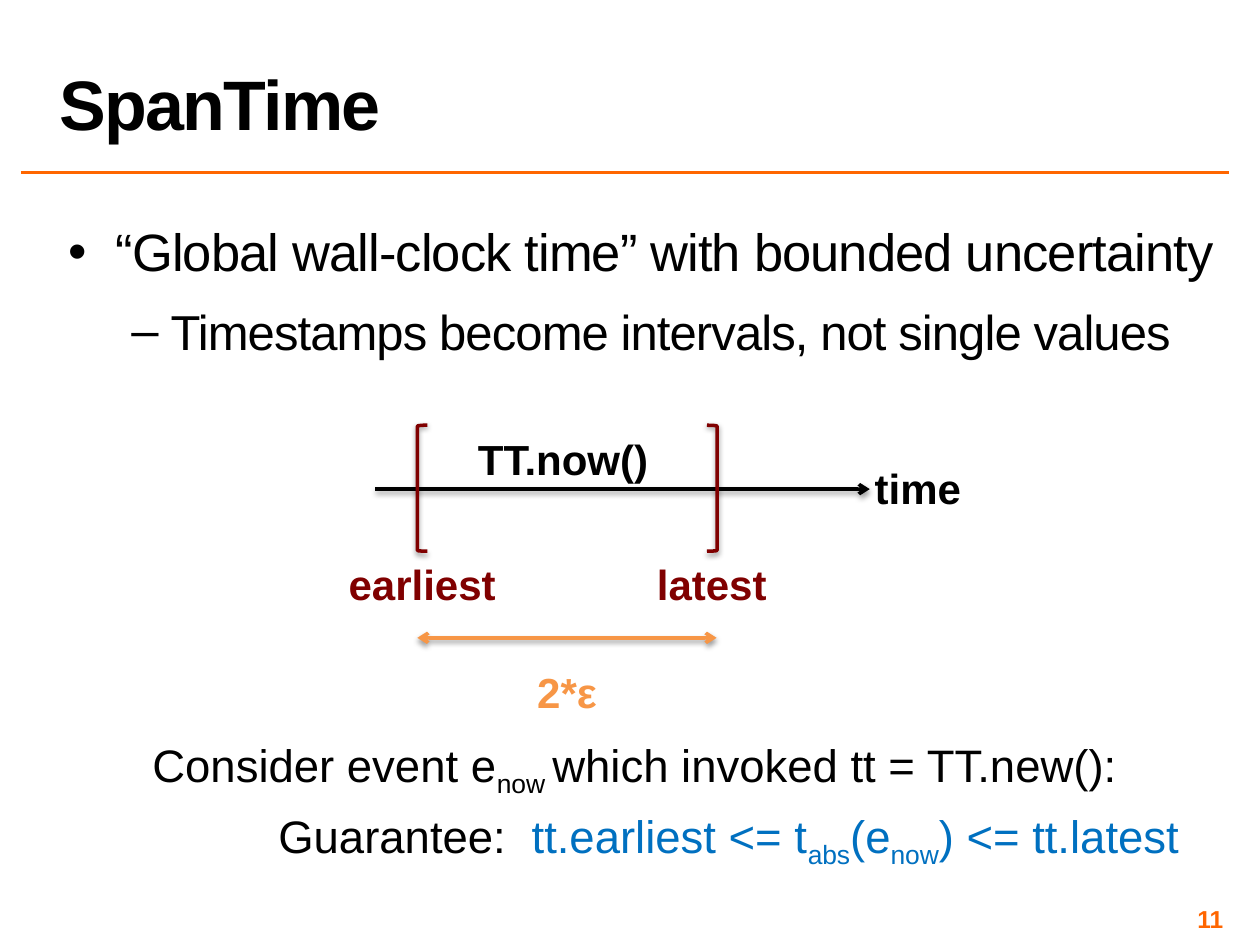
from lxml.etree import SubElement
from pptx import Presentation
from pptx.dml.color import RGBColor
from pptx.enum.shapes import MSO_CONNECTOR, MSO_SHAPE
from pptx.enum.text import MSO_ANCHOR, PP_ALIGN
from pptx.oxml.ns import qn
from pptx.util import Pt

HUES = {"black": "000000", "rule": "FF6600", "bound": "800000",
        "span": "F79646", "claim": "0070C0"}

deck = Presentation()
deck.slide_width, deck.slide_height = Pt(720), Pt(540)
slide = deck.slides.add_slide(deck.slide_layouts[6])


def write(text, box=None, frame=None, size=24, hue="black", bold=False,
          align=PP_ALIGN.LEFT, anchor=MSO_ANCHOR.TOP, wrap=True, inset=None,
          left=0, hang=0, mark=None, track=0, lead=None, above=0, below=0):
    if frame is None:
        frame = slide.shapes.add_textbox(*map(Pt, box)).text_frame
        frame.word_wrap = wrap
        frame.vertical_anchor = anchor
        if inset is not None:
            frame.margin_left = frame.margin_right = Pt(inset)
            frame.margin_top = frame.margin_bottom = Pt(inset)
        para = frame.paragraphs[0]
    else:
        para = frame.add_paragraph()
    para.alignment = align
    para.line_spacing = lead
    para.space_before, para.space_after = Pt(above), Pt(below)
    props = para._p.get_or_add_pPr()
    props.set("marL", str(Pt(left)))
    props.set("indent", str(Pt(-hang)))
    if mark:
        SubElement(props, qn("a:buFont")).set("typeface", "Arial")
        SubElement(props, qn("a:buChar")).set("char", mark)
    parts = [(text, hue, 0)] if isinstance(text, str) else text
    for words, tint, base in parts:
        run = para.add_run()
        run.text = words
        run.font.name, run.font.size, run.font.bold = "Arial", Pt(size), bold
        run.font.color.rgb = RGBColor.from_string(HUES[tint])
        if track:
            run._r.get_or_add_rPr().set("spc", str(int(track * 100)))
        if base:
            run._r.get_or_add_rPr().set("baseline", str(base * 1000))
    return frame


def draw(item, hue, ends=(), shade=True):
    item.line.color.rgb = RGBColor.from_string(HUES[hue])
    item.line.width = Pt(2)
    for end in ends:
        SubElement(item.line._get_or_add_ln(), qn(end)).set("type", "arrow")
    props = item._element.spPr
    glow = SubElement(props, qn("a:effectLst"))
    if shade:
        cast = SubElement(glow, qn("a:outerShdw"), blurRad=str(Pt(3.1)),
                          dist=str(Pt(1.6)), dir="5400000", rotWithShape="0")
        tone = SubElement(cast, qn("a:srgbClr"), val=HUES["black"])
        SubElement(tone, qn("a:alpha"), val="38000")


lines = [
    (12, 702, 98.5, "rule", (), False),
    (214.5, 497, 279.5, "black", ("a:tailEnd",), True),
    (238.5, 409.5, 364.5, "span", ("a:headEnd", "a:tailEnd"), True),
]
for start, stop, y, hue, ends, shade in lines:
    line = slide.shapes.add_connector(
        MSO_CONNECTOR.STRAIGHT, Pt(start), Pt(y), Pt(stop), Pt(y))
    draw(line, hue, ends, shade)

for kind, x in [(MSO_SHAPE.LEFT_BRACKET, 238.5), (MSO_SHAPE.RIGHT_BRACKET, 404)]:
    side = slide.shapes.add_shape(kind, Pt(x), Pt(243), Pt(5.75), Pt(72))
    side.fill.background()
    draw(side, "bound")

write("SpanTime", (27, 1.5, 675, 84), size=40, bold=True, track=-1,
      lead=0.8, anchor=MSO_ANCHOR.BOTTOM)

body = write("“Global wall-clock time” with bounded uncertainty",
             (36, 126, 666, 97), size=30, left=27, hang=27, mark="•",
             track=-0.5, lead=0.9, above=8, below=8, inset=3)
write("Timestamps become intervals, not single values", frame=body, size=28,
      left=58.5, hang=22.5, mark="–", track=-0.5, lead=0.85, above=8, below=8)

labels = [
    ("time", 492.5, 260.5, 64, "black"),
    ("earliest", 191.5, 315.5, 99.5, "bound"),
    ("latest", 368, 315.5, 77.5, "bound"),
    ("TT.now()", 265.5, 244, 112.5, "black"),
    ("2*ε", 299.5, 377.5, 49, "span"),
]
for text, x, y, width, hue in labels:
    write(text, (x, y, width, 36), hue=hue, bold=True, wrap=False,
          align=PP_ALIGN.CENTER)

event = [("Consider event e", "black", 0), ("now ", "black", -25),
         ("which invoked tt = TT.new():", "black", 0)]
claim = [("Guarantee:  ", "black", 0), ("tt.earliest <= t", "claim", 0),
         ("abs", "claim", -25), ("(e", "claim", 0), ("now", "claim", -25),
         (") <= tt.latest", "claim", 0)]
note = write(event, (44, 417.5, 648, 81.5), size=26, left=36, above=5.2)
write(claim, frame=note, size=26, left=108, above=5.2)

write("11", (534.5, 516.5, 167.5, 16.5), size=14, hue="rule", bold=True,
      align=PP_ALIGN.RIGHT, anchor=MSO_ANCHOR.MIDDLE, inset=3)

deck.save("out.pptx")
